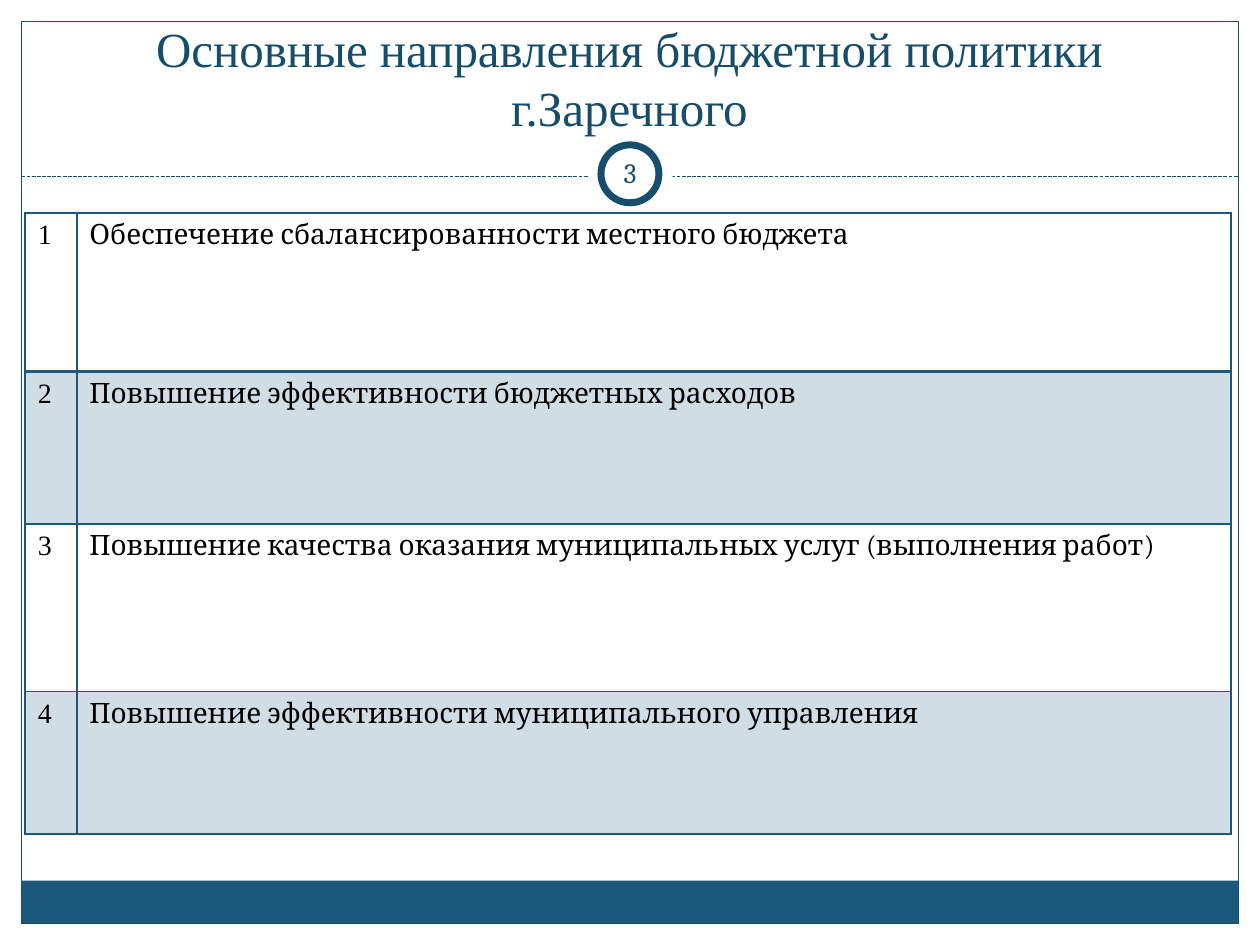
import pptx
import pptx.util
import pptx.oxml
import pptx.oxml.ns
import pptx.dml.color
import pptx.enum.dml
import pptx.enum.shapes
import pptx.enum.text
import lxml.etree

Inches = pptx.util.Inches
Pt = pptx.util.Pt
SHAPE = pptx.enum.shapes.MSO_SHAPE
ANCHOR = pptx.enum.text.MSO_ANCHOR
CENTER = pptx.enum.text.PP_ALIGN.CENTER
qn = pptx.oxml.ns.qn
NS = pptx.oxml.ns.nsdecls("a")

COLORS = {"white": "FFFFFF", "bar": "1B587C", "line": "184E6D",
          "title": "164C6C", "text": "000000"}
GOALS = ["Обеспечение сбалансированности местного бюджета",
         "Повышение эффективности бюджетных расходов",
         "Повышение качества оказания муниципальных услуг (выполнения работ)",
         "Повышение эффективности муниципального управления"]
COLS = [0.41, 9.16]
ROWS = [1.26, 1.21, 1.33, 1.13]


def color(name):
    return pptx.dml.color.RGBColor.from_string(COLORS[name])


def shape(slide, kind, box, fill=None, line=None, width=0.75):
    item = slide.shapes.add_shape(kind, *map(Inches, box))
    item.shadow.inherit = False
    if fill:
        item.fill.solid()
        item.fill.fore_color.rgb = color(fill)
    else:
        item.fill.background()
    if line:
        item.line.color.rgb = color(line)
        item.line.width = Pt(width)
    else:
        item.line.fill.background()
    return item


def style(frame, font, size, tint):
    for para in frame.paragraphs:
        for run in para.runs:
            run.font.name = font
            run.font.size = Pt(size)
            run.font.color.rgb = color(tint)


def label(slide, box, text, font, size, tint, anchor, inset):
    frame = slide.shapes.add_textbox(*map(Inches, box)).text_frame
    frame.word_wrap = True
    frame.vertical_anchor = anchor
    frame.margin_left = frame.margin_right = Inches(inset)
    frame.margin_top = frame.margin_bottom = Inches(0.05)
    frame.text = text
    frame.paragraphs[0].alignment = CENTER
    style(frame, font, size, tint)
    return frame


def frame_page(slide, box):
    x, y, w, h = box
    # White margins, bottom bar and outline
    shape(slide, SHAPE.RECTANGLE, (0, 0, 10, 1.52), "white")
    for left in (0, x + w):
        shape(slide, SHAPE.RECTANGLE, (left, 0, x, 7.5), "white")
    shape(slide, SHAPE.RECTANGLE, (x, y + h - 0.34, w, 0.34), "bar")
    shape(slide, SHAPE.RECTANGLE, box, line="line")
    # Dashed rule below the title
    rule = slide.shapes.add_connector(
        pptx.enum.shapes.MSO_CONNECTOR.STRAIGHT,
        Inches(x), Inches(y + 1.23), Inches(x + w), Inches(y + 1.23))
    rule.line.color.rgb = color("line")
    rule.line.width = Pt(0.75)
    rule.line.dash_style = pptx.enum.dml.MSO_LINE.SQUARE_DOT
    lxml.etree.SubElement(rule._element.spPr, qn("a:effectLst"))


def badge(slide, box, number):
    x, y, w, h = box
    shape(slide, SHAPE.OVAL, box, "white")
    shape(slide, SHAPE.OVAL, (x + 0.1, y + 0.1, w - 0.21, h - 0.21),
          "white", "line", 4)
    label(slide, (x + 0.08, y + 0.08, 0.5, 0.48), number,
          "Cambria", 16, "line", ANCHOR.MIDDLE, 0.05)


def title(slide, box, text):
    frame = label(slide, box, text, "Times New Roman", 28, "title",
                  ANCHOR.BOTTOM, 0.1)
    # Soft shadow under the letters
    for run in frame.paragraphs[0].runs:
        glow = pptx.oxml.parse_xml(
            f'<a:effectLst {NS}><a:outerShdw blurRad="38100" dist="38100" '
            'dir="2700000" algn="tl"><a:srgbClr val="000000">'
            '<a:alpha val="43000"/></a:srgbClr></a:outerShdw></a:effectLst>')
        run.font._element.find(qn("a:solidFill")).addnext(glow)


def edge(cell, widths):
    props = cell._tc.get_or_add_tcPr()
    for spot, (side, width) in enumerate(widths.items()):
        props.insert(spot, pptx.oxml.parse_xml(
            f'<a:ln{side} {NS} w="{Pt(width)}"><a:solidFill><a:srgbClr '
            f'val="{COLORS["bar"]}"/></a:solidFill></a:ln{side}>'))


def goals(slide, box):
    grid = slide.shapes.add_table(
        len(ROWS), len(COLS), *map(Inches, box)).table
    for col, width in zip(grid.columns, COLS):
        col.width = Inches(width)
    for r, (height, goal) in enumerate(zip(ROWS, GOALS)):
        grid.rows[r].height = Inches(height)
        pairs = [(str(r + 1), "Times New Roman"), (goal, "Cambria")]
        for c, (text, font) in enumerate(pairs):
            cell = grid.cell(r, c)
            cell.text = text
            style(cell.text_frame, font, 16, "text")
            # Every second row is tinted
            if r % 2:
                cell.fill.solid()
                cell.fill.fore_color.rgb = color("bar")
                tint = cell._tc.tcPr.find(".//" + qn("a:srgbClr"))
                lxml.etree.SubElement(tint, qn("a:alpha")).set("val", "20000")
            else:
                cell.fill.background()
            # The first row is closed by a thicker line
            edge(cell, {"L": 1, "R": 1, "T": 2 if r == 1 else 1,
                        "B": 2 if r == 0 else 1})


def main():
    deck = pptx.Presentation()
    deck.slide_width, deck.slide_height = Inches(10), Inches(7.5)
    slide = deck.slides.add_slide(deck.slide_layouts[6])
    frame_page(slide, (0.17, 0.17, 9.66, 7.16))
    badge(slide, (4.67, 1.05, 0.67, 0.67), "3")
    title(slide, (0.19, 0.16, 9.61, 0.97),
          "Основные направления бюджетной политики\vг.Заречного")
    goals(slide, (0.2, 1.69, 9.57, 4.93))
    deck.save("out.pptx")


if __name__ == "__main__":
    main()
